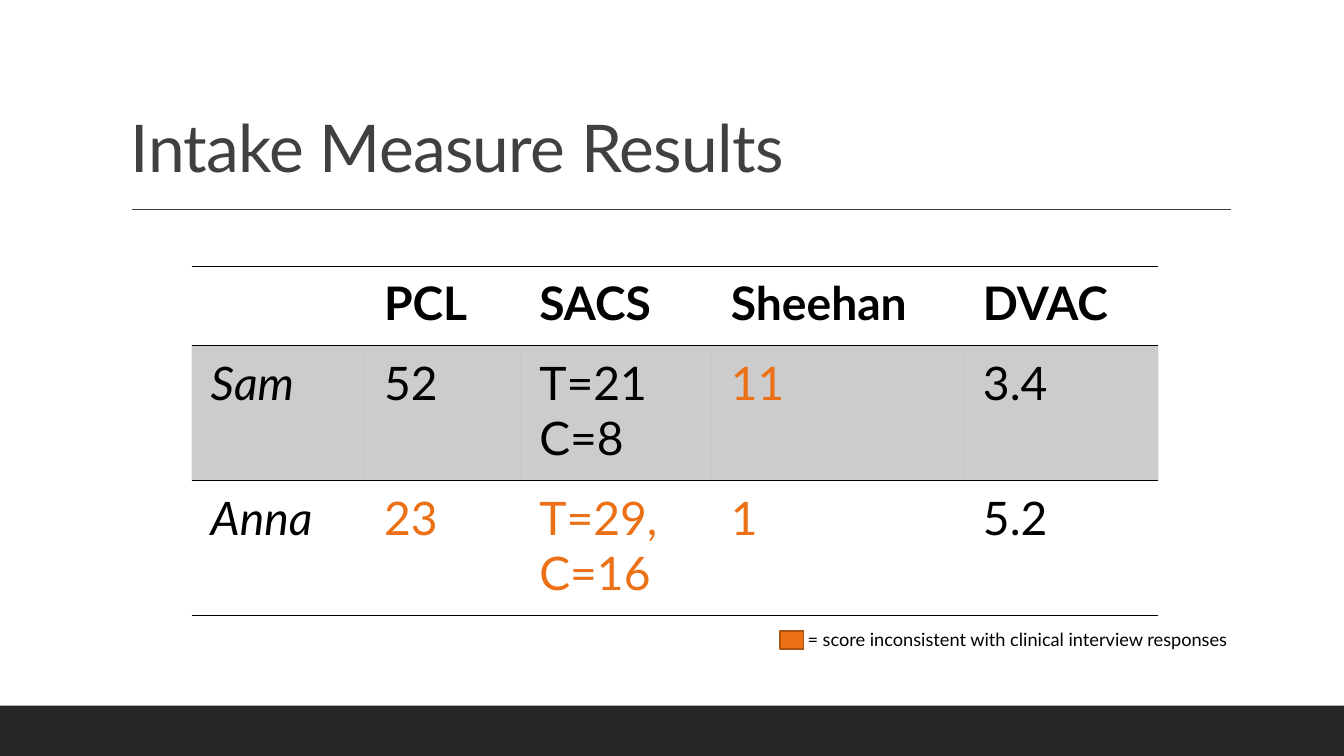
from lxml import etree
from pptx import Presentation
from pptx.dml.color import RGBColor
from pptx.enum import shapes, text
from pptx.oxml import ns
from pptx.util import Inches, Pt

BLACK = RGBColor(0x00, 0x00, 0x00)
DARK = RGBColor(0x26, 0x26, 0x26)
GRAY = RGBColor(0x40, 0x40, 0x40)
ORANGE = RGBColor(0xEC, 0x70, 0x16)
BROWN = RGBColor(0xAF, 0x53, 0x10)
PLAIN = "{2D5ABB26-0587-4C30-8999-92F81FD0307C}"

HEADS = ["", "PCL", "SACS", "Sheehan", "DVAC"]
SCORES = [
    ["Sam", "52", "T=21 C=8", "11", "3.4"],
    ["Anna", "23", "T=29, C=16", "1", "5.2"],
]
FLAGS = {(1, 3), (2, 1), (2, 2), (2, 3)}
WIDTHS = [1.72, 1.54, 1.9, 2.5, 1.93]
HEIGHTS = [0.79, 1.34, 1.34]


def child(node, tag, **attrs):
    return etree.SubElement(node, ns.qn(tag), **attrs)


class Deck:
    font = "Lato"

    def __init__(self):
        self.prs = Presentation()
        self.prs.slide_width = Inches(13.33)
        self.prs.slide_height = Inches(7.5)
        self.slide = self.prs.slides.add_slide(self.prs.slide_layouts[6])
        self.shapes = self.slide.shapes

    def run(self, para, words, size, color=BLACK, bold=False, slant=False):
        run = para.add_run()
        run.text = words
        font = run.font
        font.name = self.font
        font.size = Pt(size)
        font.bold = bold
        font.italic = slant
        font.color.rgb = color
        return run

    def label(self, box, words, size, color, anchor, inset):
        frame = self.shapes.add_textbox(*map(Inches, box)).text_frame
        frame.word_wrap = True
        frame.vertical_anchor = anchor
        frame.margin_left = frame.margin_right = Inches(inset)
        return self.run(frame.paragraphs[0], words, size, color), frame

    def title(self, box, words):
        run, frame = self.label(box, words, 47, GRAY, text.MSO_ANCHOR.BOTTOM, 0.1)
        frame.paragraphs[0].line_spacing = 0.9
        run.font._element.set("spc", "-50")

    def rect(self, box, fill, edge=None):
        rect = self.shapes.add_shape(
            shapes.MSO_SHAPE.RECTANGLE, *map(Inches, box))
        rect.shadow.inherit = False
        rect.fill.solid()
        rect.fill.fore_color.rgb = fill
        if edge is None:
            rect.line.fill.background()
        else:
            rect.line.color.rgb = edge
            rect.line.width = Pt(1.25)

    def rule(self, left, right, top):
        line = self.shapes.add_connector(
            shapes.MSO_CONNECTOR.STRAIGHT,
            Inches(left), Inches(top), Inches(right), Inches(top))
        line.line.color.rgb = GRAY
        line.line.width = Pt(1)
        child(line._element.spPr, "a:effectLst")

    def border(self, cell, sides):
        props = cell._tc.get_or_add_tcPr()
        for side in sides:
            line = child(props, "a:ln" + side, w=str(Pt(1)))
            fill = child(line, "a:solidFill")
            child(fill, "a:srgbClr", val=str(BLACK))

    def shade(self, cell, alpha):
        cell.fill.solid()
        cell.fill.fore_color.rgb = BLACK
        tint = cell._tc.tcPr.find(ns.qn("a:solidFill"))[0]
        child(tint, "a:alpha", val=str(alpha * 1000))

    def table(self, left, top, rows):
        grid = self.shapes.add_table(
            len(rows), len(WIDTHS), Inches(left), Inches(top),
            Inches(sum(WIDTHS)), Inches(sum(HEIGHTS))).table
        grid.horz_banding = False
        grid._tbl.tblPr.find(ns.qn("a:tableStyleId")).text = PLAIN
        for col, width in zip(grid.columns, WIDTHS):
            col.width = Inches(width)
        for row, height in zip(grid.rows, HEIGHTS):
            row.height = Inches(height)
        for r, row in enumerate(rows):
            for c, words in enumerate(row):
                cell = grid.cell(r, c)
                cell.margin_left = cell.margin_right = Inches(0.19)
                cell.margin_top = cell.margin_bottom = Inches(0.09)
                self.border(cell, ["TB", "T", "B"][r])
                if r == 1:
                    self.shade(cell, 20)
                else:
                    cell.fill.background()
                if words:
                    color = ORANGE if (r, c) in FLAGS else BLACK
                    self.run(cell.text_frame.paragraphs[0], words, 33, color,
                             bold=r == 0, slant=r > 0 and c == 0)


def main():
    deck = Deck()
    deck.title((1.2, 0.31, 11, 1.59), "Intake Measure Results")
    deck.rule(1.31, 12.21, 2.08)
    deck.rect((0, 7, 13.33, 0.5), DARK)
    deck.table(1.9, 2.64, [HEADS] + SCORES)
    deck.label((8.01, 6.18, 4.67, 0.32),
               "= score inconsistent with clinical interview responses",
               13, BLACK, text.MSO_ANCHOR.TOP, 0)
    deck.rect((7.74, 6.26, 0.23, 0.18), ORANGE, BROWN)
    deck.prs.save("out.pptx")


if __name__ == "__main__":
    main()
